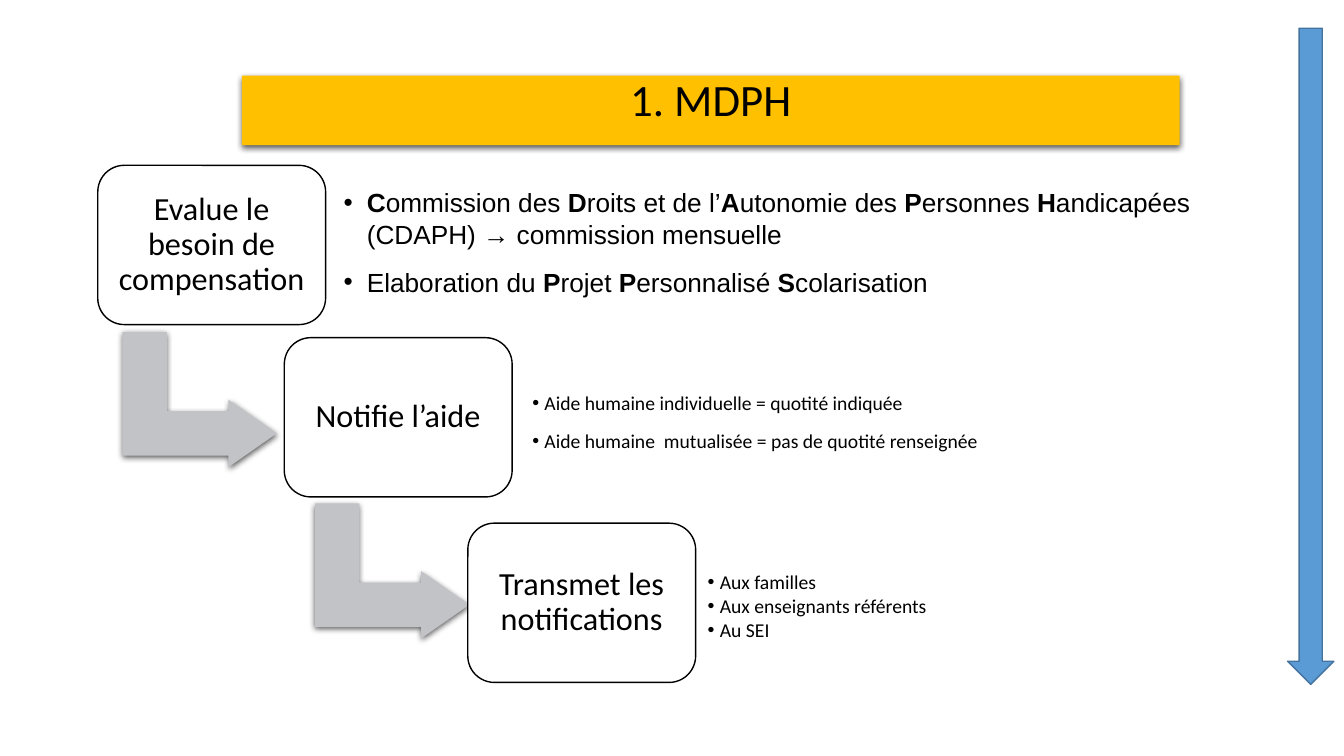
from dataclasses import dataclass
from typing import Any

from lxml.etree import SubElement as Sub
from pptx import Presentation
from pptx.dml.color import RGBColor as Rgb
from pptx.enum.shapes import MSO_SHAPE as Kind
from pptx.enum.text import MSO_ANCHOR as Anchor, MSO_AUTO_SIZE as Fit, PP_ALIGN as Align
from pptx.oxml.ns import qn
from pptx.util import Inches, Pt


@dataclass(frozen=True)
class Theme:
    ink: str = "000000"
    paper: str = "FFFFFF"
    gold: str = "FFC000"
    grey: str = "C1C3C7"
    blue: str = "5B9BD5"
    edge: str = "43739E"
    sans: str = "Calibri"
    plain: str = "Arial"
    head: float = 32
    step: float = 23
    body: float = 18.7
    note: float = 14


@dataclass(frozen=True)
class Box:
    left: float
    top: float
    width: float
    height: float

    def lengths(self) -> list[int]:
        return [Inches(n) for n in (self.left, self.top, self.width, self.height)]


@dataclass(frozen=True)
class Step:
    label: str
    left: float
    top: float


@dataclass(frozen=True)
class Notes:
    box: Box
    lines: tuple[str, ...]
    font: str
    size: float
    indent: float
    gap: float
    space: float = 1
    inset: float = 0.06
    anchor: Any = Anchor.MIDDLE
    fit: Any = Fit.NONE


LOOK = Theme()
STEPS = (
    Step("Evalue le besoin de compensation", 0.97, 1.64),
    Step("Notifie l’aide", 2.82, 3.35),
    Step("Transmet les notifications", 4.64, 5.19),
)
TURNS = (Box(1.31, 3.2, 1.34, 1.53), Box(3.22, 4.9, 1.34, 1.53))
NOTES = (
    Notes(Box(5.22, 3.56, 6.25, 1.28),
          ("Aide humaine individuelle = quotité indiquée",
           "Aide humaine  mutualisée = pas de quotité renseignée"),
          LOOK.sans, LOOK.note, 0.12, 12, 0.9),
    Notes(Box(6.96, 5.38, 4.63, 1.28),
          ("Aux familles", "Aux enseignants référents", "Au SEI"),
          LOOK.sans, LOOK.note, 0.12, 2.1, 0.9),
    Notes(Box(3.31, 1.75, 8.71, 1.21),
          ("*C*ommission des *D*roits et de l’*A*utonomie des *P*ersonnes "
           "*H*andicapées (CDAPH) → commission mensuelle",
           "Elaboration du *P*rojet *P*ersonnalisé *S*colarisation"),
          LOOK.plain, LOOK.body, 0.23, 12, inset=0.1, anchor=Anchor.TOP, fit=Fit.SHAPE_TO_FIT_TEXT),
)


def shade(shape: Any) -> None:
    effects = shape._element.spPr.find(qn("a:effectLst"))
    cast = Sub(effects, qn("a:outerShdw"), blurRad=str(Pt(4.5)), dist=str(Pt(1.5)),
               dir="5400000", algn="ctr", rotWithShape="0")
    tint = Sub(cast, qn("a:srgbClr"), val=LOOK.ink)
    Sub(tint, qn("a:alpha"), val="63000")


def draw(slide: Any, kind: Any, box: Box, fill: str, line: str = "") -> Any:
    shape = slide.shapes.add_shape(kind, *box.lengths())
    shape.shadow.inherit = False
    shape.fill.solid()
    shape.fill.fore_color.rgb = Rgb.from_string(fill)
    if line:
        shape.line.color.rgb = Rgb.from_string(line)
        shape.line.width = Pt(1)
    else:
        shape.line.fill.background()
    return shape


def frame(shape: Any, side: float, foot: float, anchor: Any) -> Any:
    text = shape.text_frame
    text.word_wrap = True
    text.vertical_anchor = anchor
    text.margin_left = text.margin_right = text.margin_top = Inches(side)
    text.margin_bottom = Inches(foot)
    return text


def write(para: Any, words: str, font: str, size: float) -> None:
    for rank, part in enumerate(words.split("*")):
        if part:
            run = para.add_run()
            run.text = part
            run.font.name = font
            run.font.size = Pt(size)
            run.font.bold = rank % 2 == 1
            run.font.color.rgb = Rgb.from_string(LOOK.ink)


def turn(slide: Any, box: Box) -> None:
    shape = draw(slide, Kind.BENT_UP_ARROW, box, LOOK.grey)
    shape.rotation = 90
    for rank, value in enumerate((0.328, 0.25, 0.358)):
        shape.adjustments[rank] = value
    shade(shape)


def stage(slide: Any, step: Step) -> None:
    shape = draw(slide, Kind.ROUNDED_RECTANGLE, Box(step.left, step.top, 2.26, 1.58),
                 LOOK.paper, LOOK.ink)
    para = frame(shape, 0.1, 0.1, Anchor.MIDDLE).paragraphs[0]
    para.alignment = Align.CENTER
    para.line_spacing = 0.9
    write(para, step.label, LOOK.sans, LOOK.step)


def notes(slide: Any, item: Notes) -> None:
    area = slide.shapes.add_textbox(*item.box.lengths())
    text = frame(area, item.inset, item.inset, item.anchor)
    text.auto_size = item.fit
    for rank, words in enumerate(item.lines):
        para = text.add_paragraph() if rank else text.paragraphs[0]
        para.line_spacing = item.space
        para.space_after = Pt(item.gap if rank < len(item.lines) - 1 else 0)
        props = para._p.get_or_add_pPr()
        props.set("marL", str(Inches(item.indent)))
        props.set("indent", str(-Inches(item.indent)))
        Sub(props, qn("a:buFont"), typeface=LOOK.plain)
        Sub(props, qn("a:buChar"), char="•")
        write(para, words, item.font, item.size)


def title(slide: Any) -> None:
    shape = draw(slide, Kind.RECTANGLE, Box(2.4, 0.75, 9.3, 0.69), LOOK.gold)
    shade(shape)
    para = frame(shape, 0.05, 0.28, Anchor.MIDDLE).paragraphs[0]
    para.alignment = Align.CENTER
    write(para, "1. MDPH", LOOK.sans, LOOK.head)


def main() -> None:
    deck = Presentation()
    deck.slide_width, deck.slide_height = Inches(13.33), Inches(7.5)
    slide = deck.slides.add_slide(deck.slide_layouts[6])
    for box in TURNS:
        turn(slide, box)
    for step in STEPS:
        stage(slide, step)
    title(slide)
    for item in NOTES:
        notes(slide, item)
    draw(slide, Kind.DOWN_ARROW, Box(12.77, 0.28, 0.46, 6.51), LOOK.blue, LOOK.edge)
    deck.save("out.pptx")


if __name__ == "__main__":
    main()
